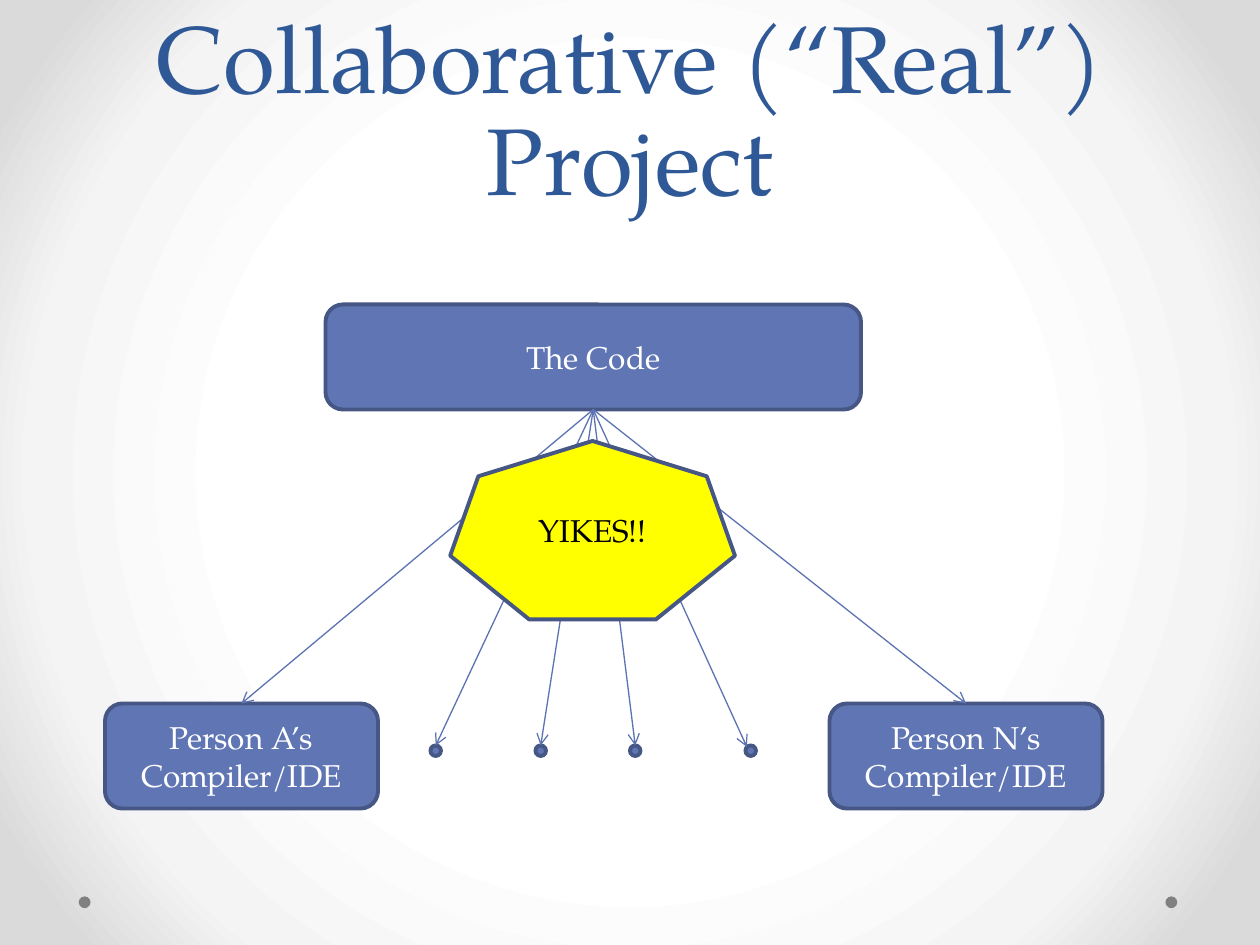
from dataclasses import dataclass
from typing import NamedTuple

from pptx import Presentation
from pptx.dml.color import RGBColor
from pptx.enum.shapes import MSO_CONNECTOR, MSO_SHAPE
from pptx.enum.text import MSO_ANCHOR, MSO_AUTO_SIZE, PP_ALIGN
from pptx.oxml import parse_xml
from pptx.oxml.ns import nsdecls
from pptx.oxml.xmlchemy import OxmlElement
from pptx.slide import Slide
from pptx.text.text import TextFrame
from pptx.util import Emu, Pt

PX = 9525


@dataclass(frozen=True)
class Theme:
    face: str = "TeX Gyre Pagella"
    head: str = "2F5897"
    fill: str = "6076B4"
    edge: str = "475785"
    wire: str = "5C72B2"
    alert: str = "FFFF00"
    light: str = "FFFFFF"
    dark: str = "000000"
    trim: str = "808080"
    glow: tuple = ((50, "FFFFFF"), (76, "F4F4F4"), (92, "DADADA"))
    big: int = 54
    lead: int = 58
    body: int = 18
    thick: float = 2.25
    thin: float = 0.75


THEME = Theme()


class Node(NamedTuple):
    kind: MSO_SHAPE
    left: int
    top: int
    width: int
    height: int
    text: str = ""
    fill: str = THEME.fill
    edge: str | None = THEME.edge
    ink: str = THEME.light


class Point(NamedTuple):
    x: int
    y: int


def px(size: int) -> Emu:
    return Emu(size * PX)


def rgb(code: str) -> RGBColor:
    return RGBColor.from_string(code)


def apply(target: object, values: dict) -> None:
    for name, value in values.items():
        setattr(target, name, value)


def write(frame: TextFrame, text: str, size: int, ink: str, anchor: MSO_ANCHOR) -> None:
    apply(frame, {"text": text, "word_wrap": True, "vertical_anchor": anchor,
                  "auto_size": MSO_AUTO_SIZE.NONE})
    para = frame.paragraphs[0]
    para.alignment = PP_ALIGN.CENTER
    font = para.runs[0].font
    apply(font, {"name": THEME.face, "size": Pt(size)})
    font.color.rgb = rgb(ink)


def paint(slide: Slide) -> None:
    stops = "".join(
        f'<a:gs pos="{pos * 1000}"><a:srgbClr val="{code}"/></a:gs>'
        for pos, code in THEME.glow
    )
    slide.element.cSld.insert(0, parse_xml(
        f'<p:bg {nsdecls("p", "a")}><p:bgPr><a:gradFill rotWithShape="1">'
        f'<a:gsLst>{stops}</a:gsLst><a:path path="circle">'
        '<a:fillToRect l="50000" t="50000" r="50000" b="50000"/></a:path>'
        '</a:gradFill><a:effectLst/></p:bgPr></p:bg>'
    ))


def title(slide: Slide, text: str) -> None:
    shape = slide.shapes.title
    apply(shape, {"left": px(48), "top": px(0), "width": px(864), "height": px(168)})
    write(shape.text_frame, text, THEME.big, THEME.head, MSO_ANCHOR.BOTTOM)
    shape.text_frame.paragraphs[0].line_spacing = Pt(THEME.lead)


def draw(slide: Slide, node: Node) -> None:
    shape = slide.shapes.add_shape(node.kind, *map(px, node[1:5]))
    shape.shadow.inherit = False
    shape.fill.solid()
    shape.fill.fore_color.rgb = rgb(node.fill)
    if node.edge:
        shape.line.color.rgb = rgb(node.edge)
        shape.line.width = Pt(THEME.thick)
    else:
        shape.line.fill.background()
    if node.text:
        write(shape.text_frame, node.text, THEME.body, node.ink, MSO_ANCHOR.MIDDLE)


def link(slide: Slide, start: Point, end: Point) -> None:
    line = slide.shapes.add_connector(MSO_CONNECTOR.STRAIGHT, *map(px, start + end))
    line.line.color.rgb = rgb(THEME.wire)
    line.line.width = Pt(THEME.thin)
    tip = OxmlElement("a:tailEnd")
    tip.set("type", "arrow")
    line.line._get_or_add_ln().append(tip)
    line._element.spPr.append(OxmlElement("a:effectLst"))


def main() -> None:
    deck = Presentation()
    apply(deck, {"slide_width": px(960), "slide_height": px(720)})
    slide = deck.slides.add_slide(deck.slide_layouts[5])
    paint(slide)

    box, oval = MSO_SHAPE.ROUNDED_RECTANGLE, MSO_SHAPE.OVAL
    trims = [Node(oval, x, 683, 9, 9, fill=THEME.trim, edge=None) for x in (888, 60)]
    code = Node(box, 248, 232, 408, 80, "The Code")
    people = [Node(box, x, 536, 208, 80, f"Person {name}’s Compiler/IDE")
              for x, name in ((80, "A"), (632, "N"))]
    dots = [Node(oval, x, 568, 8, 8) for x in (328, 408, 480, 568)]
    yikes = Node(MSO_SHAPE.HEPTAGON, 343, 336, 217, 136, "YIKES!!",
                 fill=THEME.alert, ink=THEME.dark)

    for node in trims:
        draw(slide, node)
    title(slide, "Collaborative (“Real”) Project")
    for node in [code, *people, *dots]:
        draw(slide, node)

    hub = Point(code.left + code.width // 2, code.top + code.height)
    ends = [Point(node.left + node.width // 2, node.top) for node in people + dots[:-1]]
    ends.append(Point(dots[-1].left + 1, dots[-1].top + 1))
    for end in ends:
        link(slide, hub, end)
    draw(slide, yikes)

    deck.save("out.pptx")


if __name__ == "__main__":
    main()
